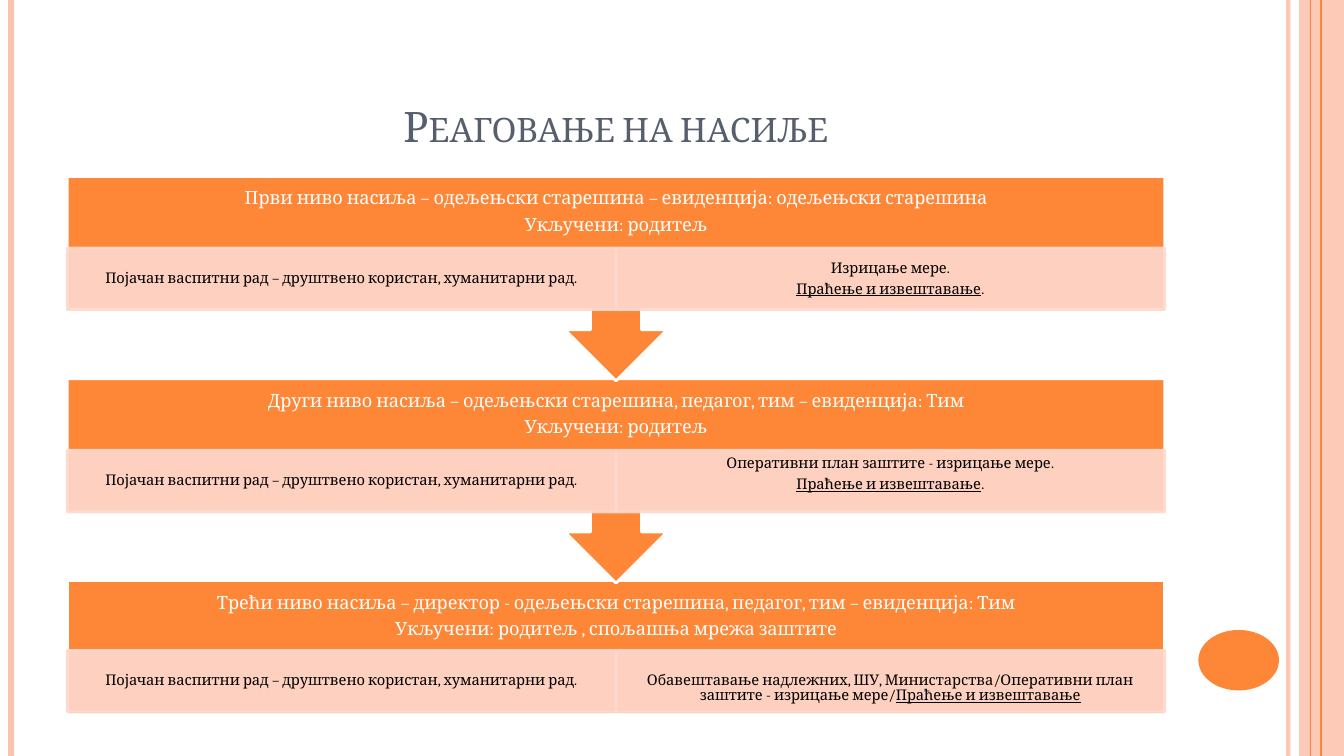
"""Builds the slide on the three levels of responding to violence."""
from dataclasses import dataclass

from lxml.etree import SubElement
from pptx import Presentation
from pptx.dml.color import RGBColor
from pptx.enum.shapes import MSO_CONNECTOR, MSO_SHAPE
from pptx.enum.text import MSO_ANCHOR, PP_ALIGN
from pptx.oxml.ns import qn
from pptx.util import Pt

ORANGE, PEACH, PALE = "FE8637", "FEC3AE", "FFD9CE"
WHITE, BLACK, SLATE = "FFFFFF", "000000", "575F6D"
LEFT, TOP, WIDTH, PITCH = 48, 126, 784, 144.5
HEADER_H, CELL_H = 51, 44
WORK = "Појачан васпитни рад – друштвено користан, хуманитарни рад."
TRACKING = "Праћење и извештавање"


@dataclass
class Run:
    text: str
    underline: bool = False


@dataclass
class Rule:
    x: float
    color: str
    width: float
    alpha: int = 100


@dataclass
class Level:
    header: list[list[Run]]
    measures: list[list[Run]]
    inset_top: float = 1.4
    inset_bottom: float = 1.4
    cell_offset: float = 51.2


RULES = [
    Rule(920.2, PEACH, 3, 93),
    Rule(7.9, PEACH, 4.5),
    Rule(943.9, ORANGE, 1.5),
    Rule(936, ORANGE, 0.75),
]
LEVELS = [
    Level(
        [[Run("Први ниво насиља – одељењски старешина – евиденција: одељењски старешина")],
         [Run("Укључени: родитељ")]],
        [[Run("Изрицање мере.")], [Run(TRACKING, True), Run(".")]],
    ),
    Level(
        [[Run("Други ниво насиља – одељењски старешина, педагог, тим – евиденција: Тим")],
         [Run("Укључени: родитељ")]],
        [[Run("Оперативни план заштите - изрицање мере.")], [Run(TRACKING, True), Run(".")]],
        inset_bottom=11.4,
    ),
    Level(
        [[Run("Трећи ниво насиља – директор - одељењски старешина, педагог, тим – евиденција: Тим")],
         [Run("Укључени: родитељ , спољашња мрежа заштите")]],
        [[Run("Обавештавање надлежних, ШУ, Министарства/Оперативни план заштите - изрицање мере/"),
          Run(TRACKING, True)]],
        inset_top=11.4,
        cell_offset=49.6,
    ),
]


def paint(fmt, color: str, alpha: int = 100) -> None:
    fmt.solid()
    fmt.fore_color.rgb = RGBColor.from_string(color)
    if alpha < 100:
        clr = fmt._xPr.find(qn("a:solidFill"))[0]
        SubElement(clr, qn("a:alpha"), val=str(alpha * 1000))


def add_rule(s, rule: Rule) -> None:
    line = s.shapes.add_connector(
        MSO_CONNECTOR.STRAIGHT, Pt(rule.x), 0, Pt(rule.x), Pt(540))
    line.line.width = Pt(rule.width)
    paint(line.line.fill, rule.color, rule.alpha)
    SubElement(line._element.spPr, qn("a:effectLst"))


def add_box(s, kind, x: float, y: float, w: float, h: float, fill: str,
            line: str | None = None, alpha: int = 100):
    sp = s.shapes.add_shape(kind, Pt(x), Pt(y), Pt(w), Pt(h))
    sp.shadow.inherit = False
    paint(sp.fill, fill, alpha)
    if line:
        sp.line.width = Pt(2)
        paint(sp.line.fill, line, alpha)
    else:
        sp.line.fill.background()
    return sp


def write(sp, paragraphs: list[list[Run]], *, size: float, color: str,
          insets: tuple[float, float, float, float] = (7.2, 3.6, 7.2, 3.6),
          anchor=MSO_ANCHOR.MIDDLE, spacing: float = 0.9,
          after: float = 0.35, small_caps: bool = False) -> None:
    tf = sp.text_frame
    tf.word_wrap = True
    tf.vertical_anchor = anchor
    tf.margin_left, tf.margin_top, tf.margin_right, tf.margin_bottom = map(Pt, insets)
    for i, runs in enumerate(paragraphs):
        p = tf.add_paragraph() if i else tf.paragraphs[0]
        p.alignment = PP_ALIGN.CENTER
        p.line_spacing = spacing
        p.space_after = Pt(size * after)
        for run in runs:
            r = p.add_run()
            r.text = run.text
            r.font.name = "Cambria"
            r.font.size = Pt(size)
            r.font.color.rgb = RGBColor.from_string(color)
            if run.underline:
                r.font.underline = True
            if small_caps:
                r._r.get_or_add_rPr().set("cap", "small")


def add_level(s, index: int, level: Level) -> None:
    y = TOP + index * PITCH
    if index == len(LEVELS) - 1:
        add_box(s, MSO_SHAPE.RECTANGLE, LEFT, y, WIDTH, 95, ORANGE, WHITE)
    else:
        sp = add_box(s, MSO_SHAPE.UP_ARROW_CALLOUT, LEFT, y, WIDTH, 146, ORANGE, WHITE)
        sp.rotation = 180
    header = s.shapes.add_textbox(Pt(LEFT), Pt(y), Pt(WIDTH), Pt(HEADER_H))
    write(header, level.header, size=13, color=WHITE, insets=(7.2, 7.2, 7.2, 7.2))
    cells = [([[Run(WORK)]], 1.4, 1.4),
             (level.measures, level.inset_top, level.inset_bottom)]
    for col, (text, top, bottom) in enumerate(cells):
        cell = add_box(s, MSO_SHAPE.RECTANGLE, LEFT + col * WIDTH / 2,
                       y + level.cell_offset, WIDTH / 2, CELL_H, PALE, PALE, 90)
        write(cell, text, size=10.5, color=BLACK, insets=(6, top, 6, bottom))


def main() -> None:
    prs = Presentation()
    prs.slide_width, prs.slide_height = Pt(960), Pt(540)
    s = prs.slides.add_slide(prs.slide_layouts[6])
    add_box(s, MSO_SHAPE.RECTANGLE, 928, 0, 32, 540, PEACH, alpha=87)
    for rule in RULES:
        add_rule(s, rule)
    add_box(s, MSO_SHAPE.OVAL, 856, 450, 57.6, 43.2, ORANGE)
    title = s.shapes.add_textbox(Pt(LEFT), Pt(21.6), Pt(WIDTH), Pt(90))
    write(title, [[Run("Реаговање на насиље")]], size=30, color=SLATE,
          anchor=MSO_ANCHOR.BOTTOM, spacing=1.0, after=0, small_caps=True)
    for index, level in reversed(list(enumerate(LEVELS))):
        add_level(s, index, level)
    prs.save("out.pptx")


if __name__ == "__main__":
    main()
